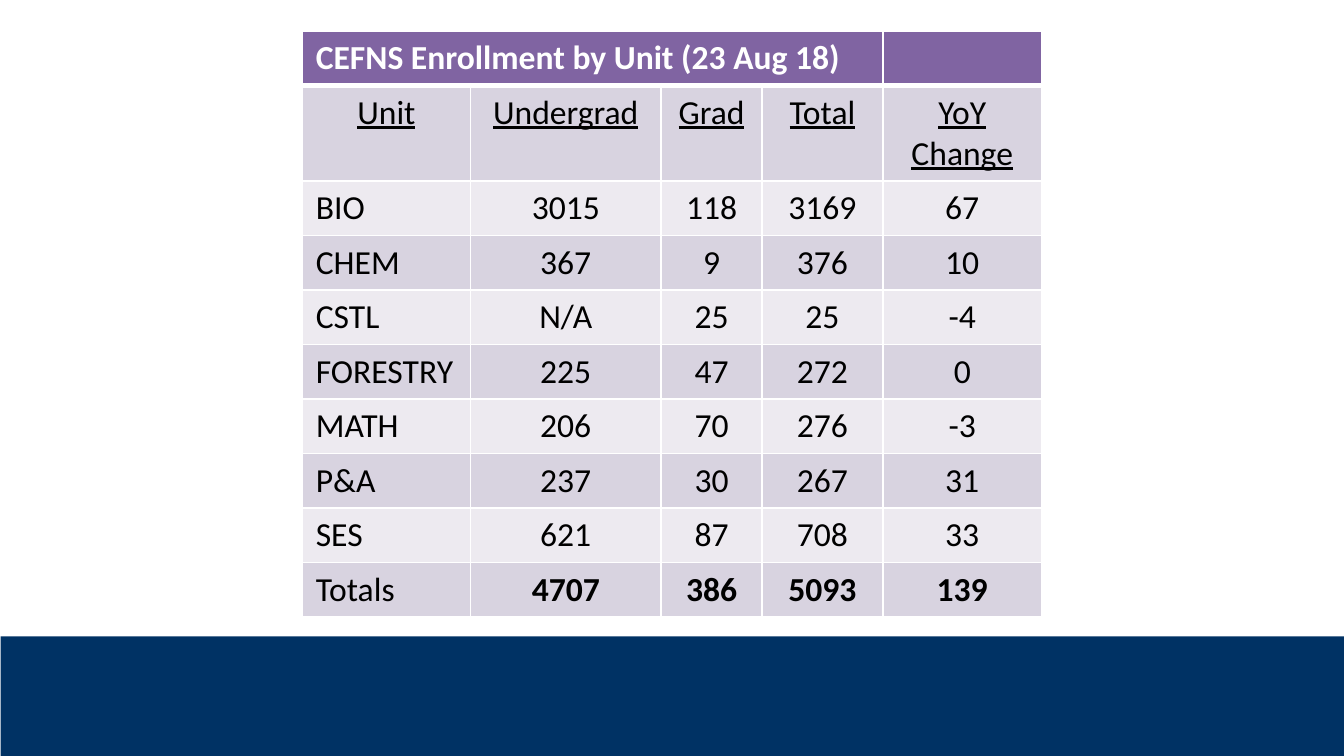
from lxml.etree import SubElement
from pptx import Presentation
from pptx.dml.color import RGBColor
from pptx.enum.shapes import MSO_SHAPE
from pptx.enum.text import PP_ALIGN
from pptx.oxml.ns import qn
from pptx.util import Pt

HEADING = "CEFNS Enrollment by Unit (23 Aug 18)"
COLUMNS = ["Unit", "Undergrad", "Grad", "Total", "YoY Change"]
UNITS = [
    ["BIO", "3015", "118", "3169", "67"],
    ["CHEM", "367", "9", "376", "10"],
    ["CSTL", "N/A", "25", "25", "-4"],
    ["FORESTRY", "225", "47", "272", "0"],
    ["MATH", "206", "70", "276", "-3"],
    ["P&A", "237", "30", "267", "31"],
    ["SES", "621", "87", "708", "33"],
]
TOTALS = ["Totals", "4707", "386", "5093", "139"]
ROWS = [[HEADING, "", "", "", ""], COLUMNS, *UNITS, TOTALS]

THEME = {
    "font": "Calibri",
    "size": 18,
    "navy": "003264",
    "header": "8064A2",
    "bands": ["EDEAF0", "D8D3E0"],
    "light": "FFFFFF",
    "dark": "000000",
}
COLUMN_WIDTHS = [90, 102.24, 54, 64.8, 84.96]
ROW_HEIGHT = 28.08
TABLE_LEFT, TABLE_TOP, TABLE_HEIGHT = 162, 16.56, 309.6


def paint(fill, color):
    fill.solid()
    fill.fore_color.rgb = RGBColor.from_string(color)


def add_borders(cell, widths):
    properties = cell._tc.get_or_add_tcPr()
    for side, width in widths.items():
        line = SubElement(properties, qn(f"a:ln{side}"), w=str(Pt(width)))
        solid = SubElement(line, qn("a:solidFill"))
        SubElement(solid, qn("a:srgbClr"), val=THEME["light"])


def format_cell(cell, text, row, column):
    is_header = row == 0
    is_totals = row == len(ROWS) - 1
    add_borders(cell, {
        "L": 1,
        "R": 1,
        "T": 3 if row == 1 else 1,
        "B": 3 if is_header else 1,
    })
    paint(cell.fill, THEME["header"] if is_header else THEME["bands"][row % 2])
    cell.text_frame.text = text
    paragraph = cell.text_frame.paragraphs[0]
    if row == 1 or (row > 1 and column > 0):
        paragraph.alignment = PP_ALIGN.CENTER
    for run in paragraph.runs:
        run.font.name = THEME["font"]
        run.font.size = Pt(THEME["size"])
        run.font.bold = is_header or (is_totals and column > 0)
        run.font.underline = row == 1
        run.font.color.rgb = RGBColor.from_string(
            THEME["light"] if is_header else THEME["dark"])


def add_footer_band(slide):
    band = slide.shapes.add_shape(
        MSO_SHAPE.RECTANGLE, Pt(0.36), Pt(340.9), Pt(720), Pt(64.1))
    band.shadow.inherit = False
    paint(band.fill, THEME["navy"])
    band.line.fill.background()


def add_enrollment_table(slide):
    frame = slide.shapes.add_table(
        len(ROWS), len(COLUMNS), Pt(TABLE_LEFT), Pt(TABLE_TOP),
        Pt(sum(COLUMN_WIDTHS)), Pt(TABLE_HEIGHT))
    table = frame.table
    for column, width in zip(table.columns, COLUMN_WIDTHS):
        column.width = Pt(width)
    for row in table.rows:
        row.height = Pt(ROW_HEIGHT)
    frame.height = Pt(TABLE_HEIGHT)
    for row, texts in enumerate(ROWS):
        for column, text in enumerate(texts):
            format_cell(table.cell(row, column), text, row, column)
    table.cell(0, 0).merge(table.cell(0, 3))


def main():
    presentation = Presentation()
    presentation.slide_width = Pt(720)
    presentation.slide_height = Pt(405)
    slide = presentation.slides.add_slide(presentation.slide_layouts[6])
    add_footer_band(slide)
    add_enrollment_table(slide)
    presentation.save("out.pptx")


if __name__ == "__main__":
    main()
